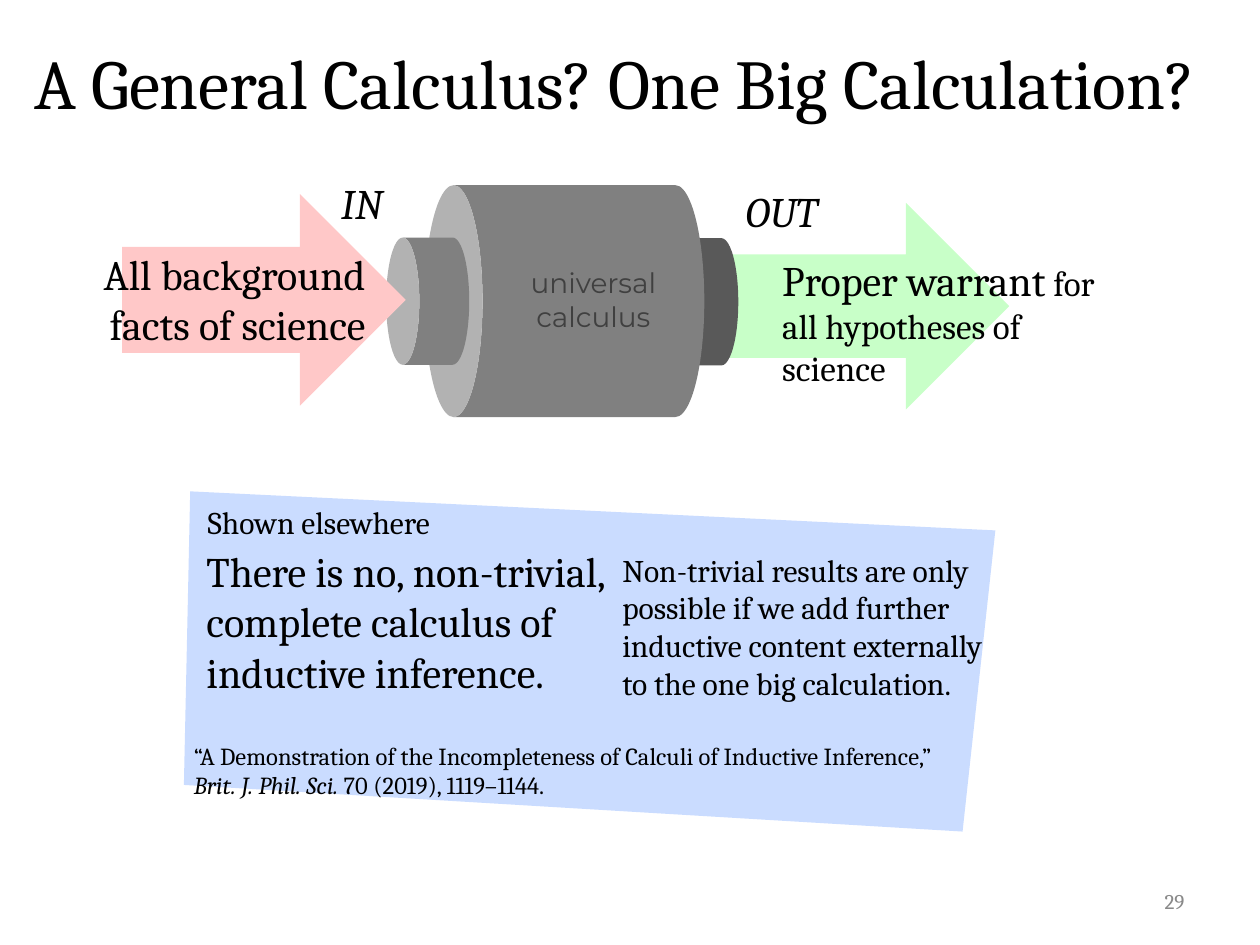
"""Build the slide asking whether one general calculus can do all inductive inference."""
from dataclasses import dataclass

from pptx import Presentation
from pptx import util as u
from pptx.dml import color
from pptx.enum import shapes, text


@dataclass(frozen=True)
class Theme:
    serif: str = "Cambria"
    sans: str = "Montserrat"
    ink: str = "000000"
    label: str = "404040"
    muted: str = "898989"
    body: str = "808080"
    outlet: str = "595959"
    inflow: str = "FFC8C8"
    outflow: str = "C8FFC8"
    panel: str = "CADCFF"
    title: int = 40
    large: int = 24
    medium: int = 20
    normal: int = 18
    small: int = 16
    source: int = 14
    number: int = 12


THEME = Theme()
ALIGN = text.PP_ALIGN
SHAPE = shapes.MSO_SHAPE


def inches(*values):
    return [u.Inches(value) for value in values]


def write(frame, spans, size=THEME.large, font=THEME.serif, ink=THEME.ink,
          italic=False, align=ALIGN.LEFT, anchor=text.MSO_ANCHOR.TOP, wrap=True):
    """Fill a text frame; a span is a string or a (string, overrides) pair."""
    frame.word_wrap = wrap
    frame.auto_size = text.MSO_AUTO_SIZE.NONE
    frame.vertical_anchor = anchor
    para = frame.paragraphs[0]
    para.alignment = align
    for item in [spans] if isinstance(spans, str) else spans:
        words, changes = (item, {}) if isinstance(item, str) else item
        span = para.add_run()
        span.text = words
        span.font.name = font
        span.font.size = u.Pt(changes.get("size", size))
        span.font.italic = changes.get("italic", italic)
        span.font.color.rgb = color.RGBColor.from_string(ink)


def add_text(page, at, spans, **style):
    box = page.shapes.add_textbox(*inches(*at))
    write(box.text_frame, spans, **style)


def paint(shape, fill):
    shape.shadow.inherit = False
    shape.fill.solid()
    shape.fill.fore_color.rgb = color.RGBColor.from_string(fill)
    shape.line.fill.background()


def add_arrow(page, at, fill):
    paint(page.shapes.add_shape(SHAPE.RIGHT_ARROW, *inches(*at)), fill)


def add_cylinder(page, at, fill, lid=0.25):
    """Add a can lying on its side with its lid to the left."""
    can = page.shapes.add_shape(SHAPE.CAN, *inches(*at))
    can.adjustments[0] = lid
    can.rotation = 270
    paint(can, fill)


def add_panel(page, corners, fill):
    start, *rest = [inches(*corner) for corner in corners]
    builder = page.shapes.build_freeform(*start)
    builder.add_line_segments(rest, close=True)
    paint(builder.convert_to_shape(), fill)


def add_title(page, at, words):
    title = page.shapes.title
    title.left, title.top, title.width, title.height = inches(*at)
    write(title.text_frame, words, size=THEME.title, anchor=text.MSO_ANCHOR.MIDDLE)


def add_machine(page):
    """Draw the calculus machine with its input and output."""
    add_arrow(page, (5.76, 1.61, 2.25, 1.64), THEME.outflow)
    add_cylinder(page, (5.02, 2.06, 1.01, 0.67), THEME.outlet, lid=0.4)
    add_cylinder(page, (3.56, 1.28, 1.84, 2.22), THEME.body)
    add_cylinder(page, (2.89, 2.06, 1.01, 0.66), THEME.body, lid=0.4)
    add_text(page, (2.61, 1.36, 0.63, 0.51), "IN", italic=True, wrap=False)
    add_text(page, (5.82, 1.42, 0.97, 0.51), "OUT", italic=True, wrap=False)
    add_text(page, (6.11, 1.97, 2.95, 0.84),
             ["Proper warrant",
              (" for all hypotheses of science", {"size": THEME.medium})])
    add_arrow(page, (0.97, 1.54, 2.25, 1.68), THEME.inflow)
    add_text(page, (0.44, 1.92, 2.56, 0.91), "All background facts of science",
             align=ALIGN.RIGHT)
    add_text(page, (3.93, 2.06, 1.56, 0.64), "universal calculus", size=THEME.small,
             font=THEME.sans, ink=THEME.label, align=ALIGN.CENTER)


def add_result(page):
    """Draw the panel stating the incompleteness result."""
    add_panel(page, [(1.51, 3.9), (7.9, 4.21), (7.64, 6.6), (1.46, 6.23)], THEME.panel)
    add_text(page, (1.55, 3.94, 2.24, 0.4), "Shown elsewhere", size=THEME.normal)
    add_text(page, (1.54, 4.28, 3.37, 1.31),
             "There is no, non-trivial, complete calculus of inductive inference.")
    add_text(page, (1.44, 5.83, 6.36, 0.57),
             ["“A Demonstration of the Incompleteness of Calculi of Inductive Inference,” ",
              ("Brit. J. Phil. Sci. ", {"italic": True}),
              "70 (2019), 1119–1144."], size=THEME.source)
    add_text(page, (4.84, 4.32, 3.12, 1.31),
             "Non-trivial results are only possible if we add further inductive "
             "content externally to the one big calculation.", size=THEME.normal)


def main():
    deck = Presentation()
    deck.slide_width, deck.slide_height = inches(10, 7.5)
    page = deck.slides.add_slide(deck.slide_layouts.get_by_name("Title Only"))
    add_title(page, (0.17, 0.22, 9.83, 0.86), "A General Calculus? One Big Calculation?")
    add_machine(page)
    add_result(page)
    add_text(page, (7.17, 6.95, 2.33, 0.4), "29", size=THEME.number, ink=THEME.muted,
             align=ALIGN.RIGHT, anchor=text.MSO_ANCHOR.MIDDLE)
    deck.save("out.pptx")


if __name__ == "__main__":
    main()
